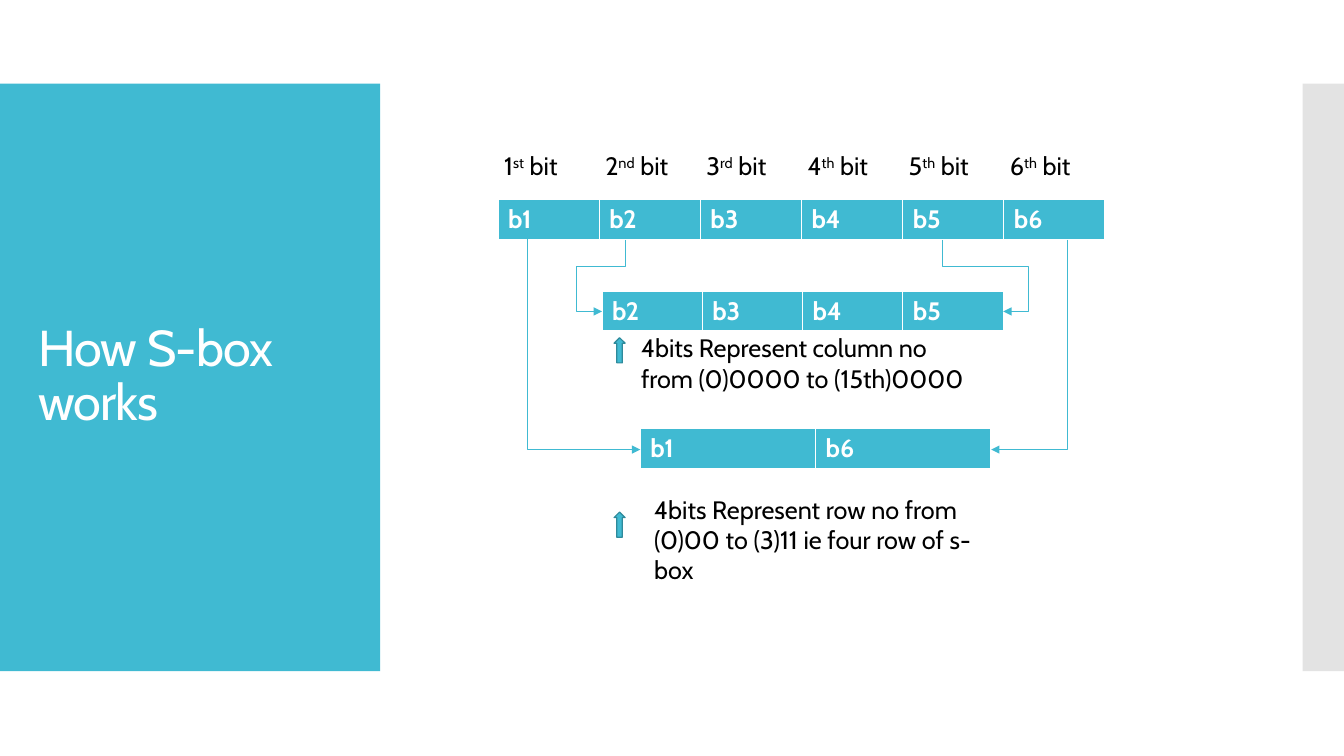
from lxml.etree import SubElement
from pptx import Presentation
from pptx.dml.color import RGBColor
from pptx.enum.shapes import MSO_CONNECTOR, MSO_SHAPE
from pptx.enum.text import MSO_ANCHOR
from pptx.oxml import parse_xml
from pptx.oxml.ns import qn
from pptx.util import Inches, Pt

NS = "http://schemas.openxmlformats.org/drawingml/2006/main"
TEAL, EDGE, GREY, WHITE, BLACK = "40BAD2", "2F8A9B", "C8C8C8", "FFFFFF", "000000"
BODY = {"name": "Cabin", "size": Pt(18), "bold": False}
HEAD = {**BODY, "size": Pt(36)}
BOLD = {**BODY, "bold": True}

PANELS = [((0, 0.83, 3.77, 5.83), TEAL), ((12.92, 0.83, 0.42, 5.83), GREY)]
TITLE = ("How S-box works", (0.28, 1.23, 3.22, 5.03))
ORDER = ["st", "nd", "rd", "th", "th", "th"]
LABELS = (4.9, 1.45, 6.02, 0.41)
BITS = [
    (["b1", "b2", "b3", "b4", "b5", "b6"], (4.94, 1.98, 6.02, 0.41)),
    (["b2", "b3", "b4", "b5"], (5.97, 2.89, 3.98, 0.4)),
    (["b1", "b6"], (6.35, 4.25, 3.48, 0.41)),
]
NOTES = [
    ("4bits Represent column no from (0)0000 to (15th)0000", (6.26, 3.25, 3.4, 0.71)),
    ("4bits Represent row no from (0)00 to (3)11 ie four row of s-box",
     (6.39, 4.85, 3.4, 1.01)),
]
MARKS = [(6.09, 3.35, 0.11, 0.25), (6.09, 5.08, 0.11, 0.25)]
LINKS = [
    ((5.23, 2.28), (6.35, 4.46), None),
    ((10.59, 2.38), (9.83, 4.46), None),
    ((6.2, 2.38), (5.97, 3.09), (5.72, 2.64)),
    ((9.35, 2.38), (9.95, 3.09), (10.2, 2.64)),
]


def color(code):
    return RGBColor.from_string(code)


def add_run(para, text, style, code):
    run = para.add_run()
    run.text = text
    for key, value in style.items():
        setattr(run.font, key, value)
    run.font.color.rgb = color(code)
    return run


def add_block(slide, kind, box, fill, edge=None):
    shape = slide.shapes.add_shape(kind, *map(Inches, box))
    shape.shadow.inherit = False
    shape.fill.solid()
    shape.fill.fore_color.rgb = color(fill)
    if edge:
        shape.line.color.rgb = color(edge)
        shape.line.width = Pt(0.85)
    else:
        shape.line.fill.background()
    return shape


def add_text(slide, text, box, style, code):
    frame = slide.shapes.add_textbox(*map(Inches, box)).text_frame
    frame.word_wrap = True
    return frame, add_run(frame.paragraphs[0], text, style, code)


def add_grid(slide, count, box):
    table = slide.shapes.add_table(1, count, *map(Inches, box)).table
    table.first_row = table.horz_banding = False
    for col in table.columns:
        col.width = Inches(box[2] / count)
    return [table.cell(0, i) for i in range(count)]


def add_edges(cell):
    props = cell._tc.get_or_add_tcPr()
    for spot, (side, width) in enumerate([("L", 1), ("R", 1), ("T", 1), ("B", 3)]):
        props.insert(spot, parse_xml(
            f'<a:ln{side} xmlns:a="{NS}" w="{Pt(width)}"><a:solidFill>'
            f'<a:srgbClr val="{WHITE}"/></a:solidFill></a:ln{side}>'))


def add_link(slide, start, end, bend):
    """Turn an elbow a quarter so that it leaves downward from its start."""
    (x1, y1), (x2, y2) = start, end
    right = x2 > x1
    wide, high = y2 - y1, abs(x2 - x1)
    left, top = (x1 + x2 - wide) / 2, (y1 + y2 - high) / 2
    ends = (left + wide, left) if right else (left, left + wide)
    link = slide.shapes.add_connector(
        MSO_CONNECTOR.ELBOW, Inches(ends[0]), Inches(top),
        Inches(ends[1]), Inches(top + high))
    link.line.color.rgb = color(TEAL)
    link.line.width = Pt(0.75)
    props = link._element.spPr
    props.find(qn("a:xfrm")).set("rot", str((270 if right else 90) * 60000))
    shape = props.find(qn("a:prstGeom"))
    shape.set("prst", "bentConnector4" if bend else "bentConnector2")
    if bend:
        guides = shape.find(qn("a:avLst"))
        ratios = ((bend[1] - y1) / wide, (bend[0] - x1) / (x2 - x1))
        for i, ratio in enumerate(ratios, 1):
            SubElement(guides, qn("a:gd"), name=f"adj{i}",
                       fmla=f"val {round(ratio * 100000)}")
    SubElement(props.find(qn("a:ln")), qn("a:tailEnd"), type="triangle")
    SubElement(props, qn("a:effectLst"))


def main():
    deck = Presentation()
    deck.slide_width, deck.slide_height = Inches(13.33), Inches(7.5)
    slide = deck.slides.add_slide(deck.slide_layouts[6])

    for box, fill in PANELS:
        panel = add_block(slide, MSO_SHAPE.RECTANGLE, box, fill)
        if fill == GREY:
            tint = panel._element.spPr.find(qn("a:solidFill"))[0]
            SubElement(tint, qn("a:alpha"), val="50000")

    frame, run = add_text(slide, *TITLE, HEAD, WHITE)
    frame.vertical_anchor = MSO_ANCHOR.MIDDLE
    frame.paragraphs[0].line_spacing = 0.9
    run.font._element.set("spc", "-60")

    for names, box in BITS:
        for name, cell in zip(names, add_grid(slide, len(names), box)):
            cell.fill.solid()
            cell.fill.fore_color.rgb = color(TEAL)
            add_edges(cell)
            add_run(cell.text_frame.paragraphs[0], name, BOLD, WHITE)

    for i, cell in enumerate(add_grid(slide, len(ORDER), LABELS)):
        cell.fill.background()
        para = cell.text_frame.paragraphs[0]
        add_run(para, str(i + 1), BODY, BLACK)
        add_run(para, ORDER[i], BODY, BLACK).font._element.set("baseline", "30000")
        add_run(para, " bit", BODY, BLACK)

    for text, box in NOTES:
        add_text(slide, text, box, BODY, BLACK)
    for link in LINKS:
        add_link(slide, *link)
    for box in MARKS:
        add_block(slide, MSO_SHAPE.UP_ARROW, box, TEAL, EDGE)

    deck.save("out.pptx")


if __name__ == "__main__":
    main()
